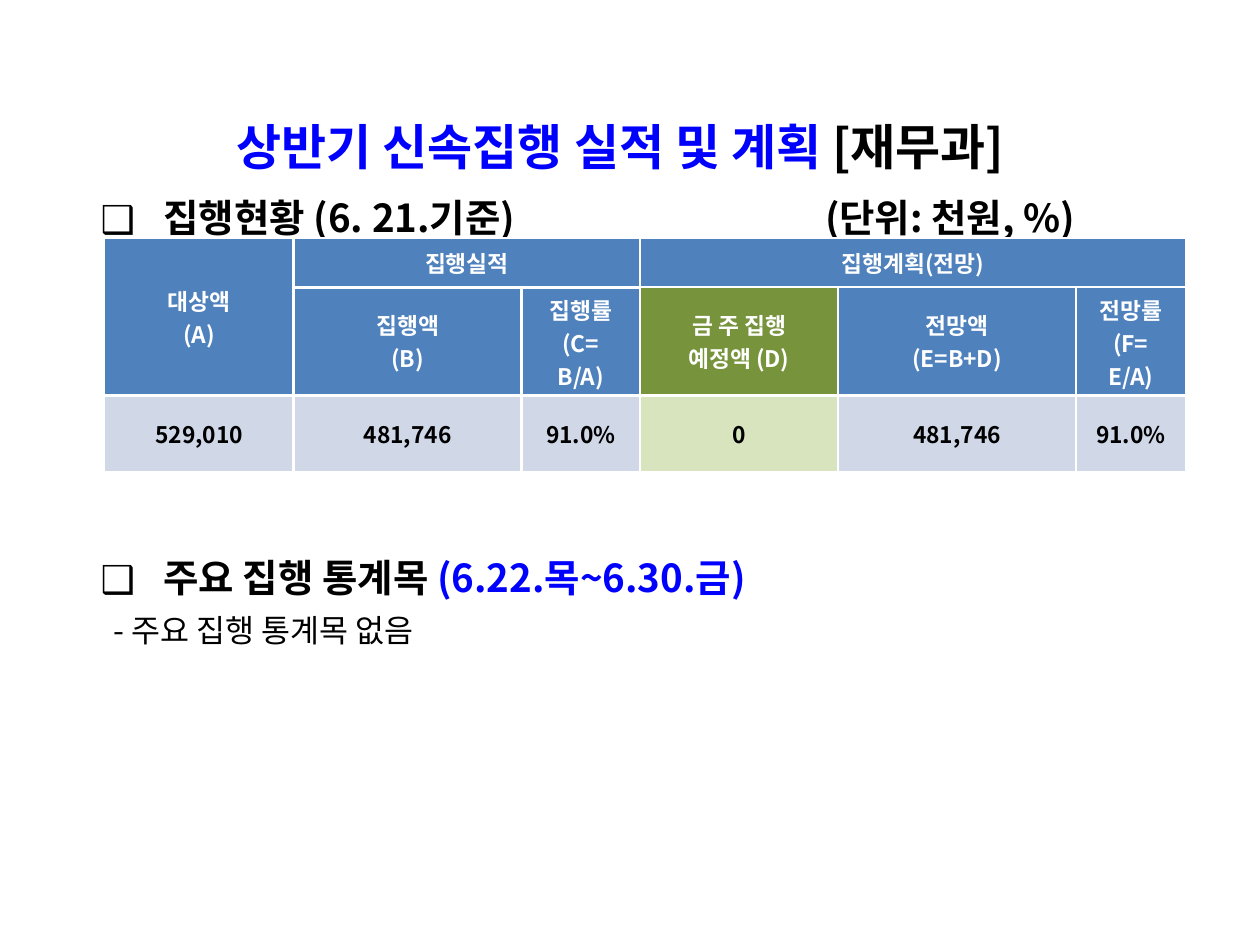
from lxml.etree import SubElement
from pptx import Presentation
from pptx.dml.color import RGBColor
from pptx.enum.text import MSO_ANCHOR, PP_ALIGN
from pptx.oxml import parse_xml
from pptx.oxml.ns import nsdecls, qn
from pptx.util import Inches, Pt

FONT = "Noto Sans CJK KR"
COLORS = {
    "black": "000000",
    "white": "FFFFFF",
    "accent": "0000FF",
    "header": "4F81BD",
    "header_week": "77933C",
    "data": "D0D8E8",
    "data_week": "D7E4BD",
}
COLUMN_WIDTHS = [1.5, 1.81, 0.94, 1.57, 1.89, 0.87]
ROW_HEIGHTS = [0.39, 0.86, 0.61]
WEEK_COLUMN = 3
ROWS = [
    ["대상액\n(A)", "집행실적", "", "집행계획(전망)", "", ""],
    ["", "집행액\n(B)", "집행률\n(C=\nB/A)", "금 주 집행\n예정액 (D)",
     "전망액\n(E=B+D)", "전망률\n(F=\nE/A)"],
    ["529,010", "481,746", "91.0%", "0", "481,746", "91.0%"],
]
MERGES = [((0, 0), (1, 0)), ((0, 1), (0, 2)), ((0, 3), (0, 5))]


def rgb(name):
    return RGBColor.from_string(COLORS[name])


def format_run(run, size, color, bold=True):
    run.font.size = Pt(size)
    run.font.bold = bold
    run.font.color.rgb = rgb(color)
    run.font.name = FONT
    SubElement(run.font._element, qn("a:ea"), typeface=FONT)


def add_runs(paragraph, parts, size, bold=True):
    for text, color in parts:
        run = paragraph.add_run()
        run.text = text
        format_run(run, size, color, bold)


def add_title(slide, parts):
    title = slide.shapes.title
    title.left, title.top = Inches(0.2), Inches(0.83)
    title.width, title.height = Inches(9.45), Inches(0.65)
    title.text_frame.vertical_anchor = MSO_ANCHOR.MIDDLE
    paragraph = title.text_frame.paragraphs[0]
    paragraph.alignment = PP_ALIGN.CENTER
    add_runs(paragraph, parts, 28)


def add_line(slide, left, middle, width, parts, size, bold=True):
    height = 0.56
    box = slide.shapes.add_textbox(
        Inches(left), Inches(middle - height / 2), Inches(width), Inches(height))
    box.text_frame.word_wrap = True
    box.text_frame.vertical_anchor = MSO_ANCHOR.MIDDLE
    paragraph = box.text_frame.paragraphs[0]
    add_runs(paragraph, parts, size, bold)
    return paragraph


def add_heading(slide, middle, width, parts):
    paragraph = add_line(slide, 0.7, middle, width, parts, 22)
    properties = paragraph._p.get_or_add_pPr()
    properties.set("marL", str(Inches(0.5)))
    properties.set("indent", str(-Inches(0.5)))
    bullet_color = SubElement(properties, qn("a:buClr"))
    SubElement(bullet_color, qn("a:srgbClr"), val=COLORS["black"])
    SubElement(properties, qn("a:buFont"), typeface=FONT)
    SubElement(properties, qn("a:buChar"), char="❑")


def set_borders(cell, widths):
    properties = cell._tc.get_or_add_tcPr()
    for index, (side, width) in enumerate(zip("LRTB", widths)):
        properties.insert(index, parse_xml(
            f'<a:ln{side} {nsdecls("a")} w="{Pt(width)}"><a:solidFill>'
            f'<a:srgbClr val="{COLORS["white"]}"/></a:solidFill></a:ln{side}>'))


def border_widths(row, column):
    last = len(COLUMN_WIDTHS) - 1
    row_edges = [1, 1.5 if column >= WEEK_COLUMN else 2.25, 2.25, 1.5]
    starts_last = column == last or (row, column) == (0, WEEK_COLUMN)
    bottom = 2.25 if (row, column) == (0, 0) else row_edges[row + 1]
    return (1 if column == 0 else 1.5, 1 if starts_last else 1.5,
            row_edges[row], bottom)


def format_cell(cell, text, row, column):
    is_data = row == len(ROWS) - 1
    fill = "data" if is_data else "header"
    if column == WEEK_COLUMN and row > 0:
        fill += "_week"
    cell.fill.solid()
    cell.fill.fore_color.rgb = rgb(fill)
    if cell.is_spanned:
        return
    set_borders(cell, border_widths(row, column))
    cell.vertical_anchor = MSO_ANCHOR.MIDDLE
    cell.text_frame.text = text
    for paragraph in cell.text_frame.paragraphs:
        paragraph.alignment = PP_ALIGN.CENTER
        for run in paragraph.runs:
            format_run(run, 13, "black" if is_data else "white")


def add_budget_table(slide):
    frame = slide.shapes.add_table(
        len(ROWS), len(COLUMN_WIDTHS), Inches(0.83), Inches(1.89),
        Inches(sum(COLUMN_WIDTHS)), Inches(sum(ROW_HEIGHTS)))
    table = frame.table
    table.horz_banding = False
    for column, width in zip(table.columns, COLUMN_WIDTHS):
        column.width = Inches(width)
    for row, height in zip(table.rows, ROW_HEIGHTS):
        row.height = Inches(height)
    for first, last in MERGES:
        table.cell(*first).merge(table.cell(*last))
    for row, texts in enumerate(ROWS):
        for column, text in enumerate(texts):
            format_cell(table.cell(row, column), text, row, column)


def main():
    presentation = Presentation()
    presentation.slide_width = Inches(10)
    presentation.slide_height = Inches(7.5)
    slide = presentation.slides.add_slide(presentation.slide_layouts[5])
    add_title(slide, [("상반기 신속집행 실적 및 계획 ", "accent"), ("[재무과]", "black")])
    add_heading(slide, 1.72, 5.5, [("집행현황 (6. 21.기준)", "black")])
    add_line(slide, 6.45, 1.72, 3, [("(단위: 천원, %)", "black")], 22)
    add_budget_table(slide)
    add_heading(slide, 4.58, 8.5,
                [("주요 집행 통계목 ", "black"), ("(6.22.목~6.30.금)", "accent")])
    add_line(slide, 0.8, 5, 8, [("- 주요 집행 통계목 없음", "black")], 18, bold=False)
    presentation.save("out.pptx")


if __name__ == "__main__":
    main()
